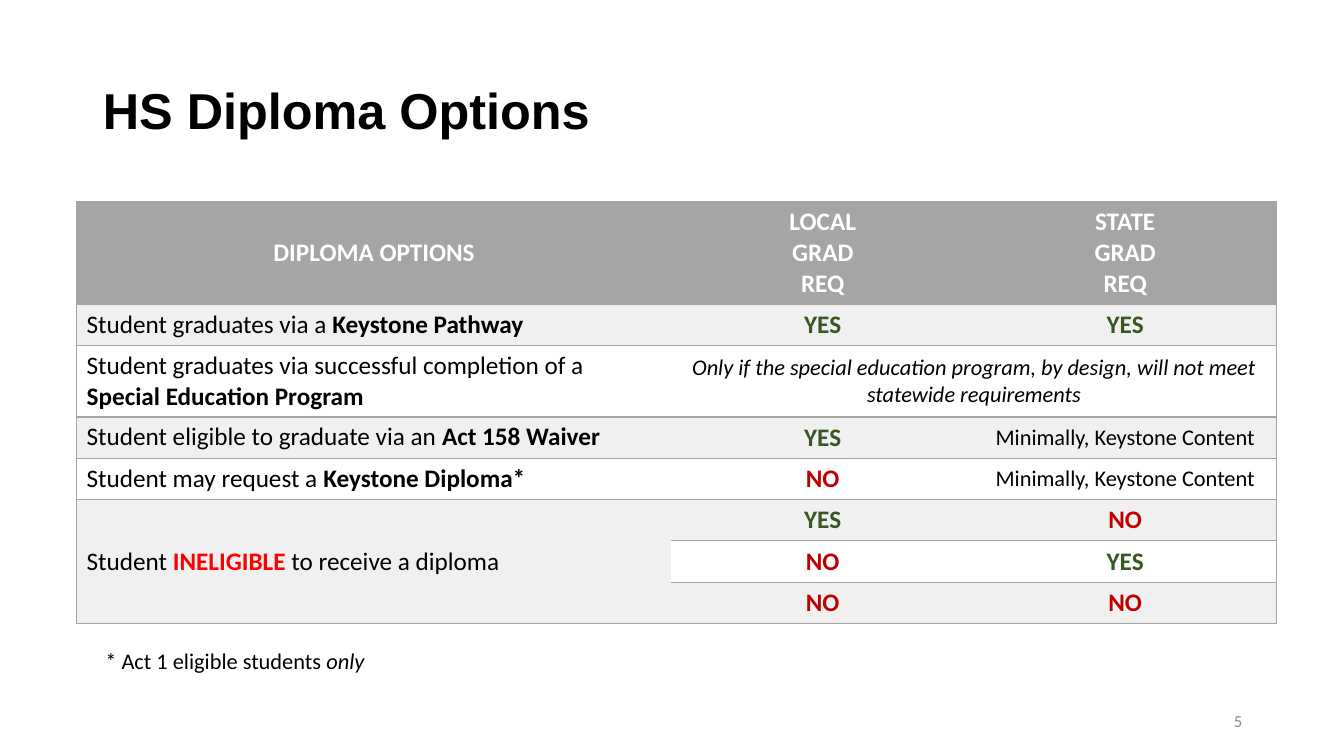
"""Build the HS Diploma Options slide."""
from dataclasses import dataclass

from lxml.etree import Element, SubElement
from pptx import Presentation
from pptx.dml.color import RGBColor
from pptx.enum.text import MSO_ANCHOR as Anchor, MSO_AUTO_SIZE as AutoSize, PP_ALIGN as Align
from pptx.oxml.ns import qn
from pptx.util import Pt

EMU_PER_PX = 9144
COLORS = {
    "black": "000000", "white": "FFFFFF", "gray": "A5A5A5", "band": "F0F0F0",
    "green": "385723", "red": "C00000", "alert": "FF0000", "number": "8C8C8C",
}
COLUMN_WIDTHS = (590, 300, 300)
ROW_HEIGHTS = (101, 41, 70, 41, 41, 41, 41, 41)


@dataclass(frozen=True)
class Span:
    """A piece of text with its own format."""
    text: str
    color: str = "black"
    bold: bool = False
    italic: bool = False
    size: int = 18


@dataclass(frozen=True)
class Entry:
    """The paragraphs of one table cell and their placement."""
    paras: tuple[tuple[Span, ...], ...]
    align: Align = Align.CENTER
    anchor: Anchor = Anchor.MIDDLE


def px(length: int) -> int:
    """Turn px into EMU."""
    return length * EMU_PER_PX


def rgb(name: str) -> RGBColor:
    """Look up a named colour."""
    return RGBColor.from_string(COLORS[name])


def heading(*lines: str) -> Entry:
    """Describe a header cell with one paragraph for each line."""
    return Entry(tuple((Span(line, "white", True),) for line in lines))


def option(*spans: Span, anchor: Anchor = Anchor.TOP) -> Entry:
    """Describe a left-aligned cell that names a diploma option."""
    return Entry((spans,), Align.LEFT, anchor)


def remark(text: str, italic: bool = False) -> Entry:
    """Describe a smaller centred cell."""
    return Entry(((Span(text, italic=italic, size=16),),))


YES = Entry(((Span("YES", "green", True),),))
NO = Entry(((Span("NO", "red", True),),))
MINIMAL = remark("Minimally, Keystone Content")
ROWS: tuple[tuple[Entry | None, ...], ...] = (
    (heading("DIPLOMA OPTIONS"), heading("LOCAL", "GRAD", "REQ"),
     heading("STATE", "GRAD", "REQ")),
    (option(Span("Student graduates via a "), Span("Keystone Pathway", bold=True)), YES, YES),
    (option(Span("Student graduates via successful completion of a "),
            Span("Special Education Program", bold=True)),
     remark("Only if the special education program, by design, "
            "will not meet statewide requirements", italic=True), None),
    (option(Span("Student eligible to graduate via an "), Span("Act 158 Waiver", bold=True)),
     YES, MINIMAL),
    (option(Span("Student may request a "), Span("Keystone Diploma*", bold=True)), NO, MINIMAL),
    (option(Span("Student "), Span("INELIGIBLE", "alert", True),
            Span(" to receive a diploma"), anchor=Anchor.MIDDLE), YES, NO),
    (None, NO, YES),
    (None, NO, NO),
)


def write_text(frame, *paras: tuple[Span, ...], font: str = "Calibri",
               align: Align = Align.LEFT, anchor: Anchor = Anchor.TOP,
               line_spacing: float | None = None) -> None:
    """Fill a text frame with formatted paragraphs."""
    frame.word_wrap = True
    frame.vertical_anchor = anchor
    for index, spans in enumerate(paras):
        para = frame.add_paragraph() if index else frame.paragraphs[0]
        para.alignment = align
        para.line_spacing = line_spacing
        for span in spans:
            run = para.add_run()
            run.text = span.text
            run.font.name = font
            run.font.size = Pt(span.size)
            run.font.bold = span.bold
            run.font.italic = span.italic
            run.font.color.rgb = rgb(span.color)


def set_borders(cell, sides: str) -> None:
    """Draw the given sides of a cell and clear the others."""
    properties = cell._tc.get_or_add_tcPr()
    for position, side in enumerate("LRTB"):
        line = Element(qn(f"a:ln{side}"), w=str(Pt(1)))
        if side in sides:
            fill = SubElement(line, qn("a:solidFill"))
            SubElement(fill, qn("a:srgbClr"), val=COLORS["gray"])
        else:
            SubElement(line, qn("a:noFill"))
        properties.insert(position, line)


def add_options_table(page) -> None:
    """Add the table of diploma options."""
    table = page.shapes.add_table(len(ROWS), len(COLUMN_WIDTHS), px(76), px(200),
                                  px(sum(COLUMN_WIDTHS)), px(sum(ROW_HEIGHTS))).table
    for column, width in zip(table.columns, COLUMN_WIDTHS):
        column.width = px(width)
    for row, height in zip(table.rows, ROW_HEIGHTS):
        row.height = px(height)
    table.cell(2, 1).merge(table.cell(2, 2))
    table.cell(5, 0).merge(table.cell(7, 0))
    last = len(COLUMN_WIDTHS) - 1
    for row_index, entries in enumerate(ROWS):
        band = "gray" if row_index == 0 else "band" if row_index % 2 else "white"
        for column_index, entry in enumerate(entries):
            cell = table.cell(row_index, column_index)
            cell.fill.solid()
            cell.fill.fore_color.rgb = rgb(band)
            right = column_index + (cell.span_width if cell.is_merge_origin else 1) - 1
            set_borders(cell, "TB" + "L" * (column_index == 0) + "R" * (right == last))
            if entry:
                write_text(cell.text_frame, *entry.paras, align=entry.align)
                cell.vertical_anchor = entry.anchor


def add_label(page, left: int, top: int, width: int, height: int,
              *spans: Span, align: Align, anchor: Anchor = Anchor.TOP) -> None:
    """Add a one-paragraph text box."""
    box = page.shapes.add_textbox(px(left), px(top), px(width), px(height))
    write_text(box.text_frame, spans, align=align, anchor=anchor)


def main() -> None:
    """Build and save the deck."""
    deck = Presentation()
    deck.slide_width, deck.slide_height = px(1333), px(750)
    page = deck.slides.add_slide(deck.slide_layouts[5])
    title = page.shapes.title
    title.left, title.top, title.width, title.height = map(px, (92, 40, 1150, 145))
    write_text(title.text_frame, (Span("HS Diploma Options", bold=True, size=36),),
               font="Arial", anchor=Anchor.MIDDLE, line_spacing=0.9)
    title.text_frame.auto_size = AutoSize.NONE
    add_options_table(page)
    add_label(page, 76, 637, 314, 37, Span("* Act 1 eligible students ", size=16),
              Span("only", italic=True, size=16), align=Align.CENTER)
    add_label(page, 942, 695, 300, 40, Span("5", "number", size=12),
              align=Align.RIGHT, anchor=Anchor.MIDDLE)
    deck.save("out.pptx")


if __name__ == "__main__":
    main()
